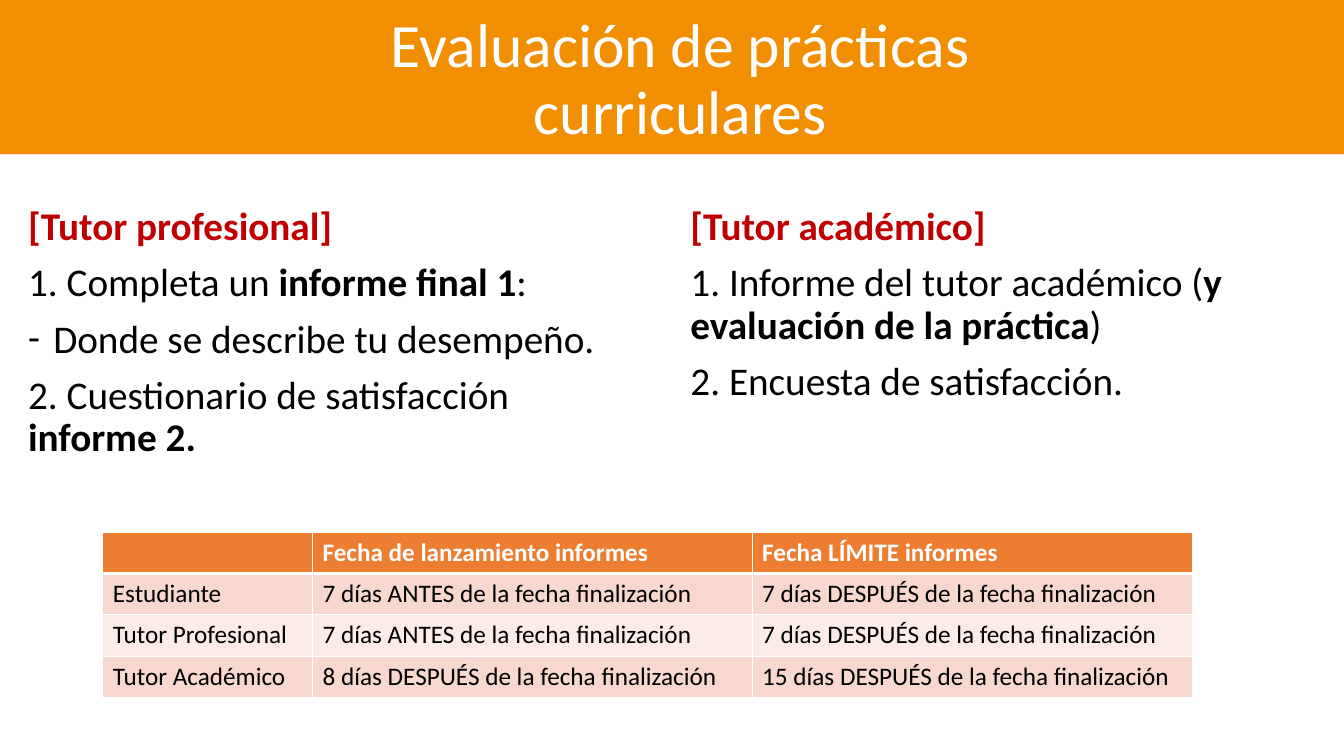
from lxml.etree import SubElement
from pptx import Presentation
from pptx.dml.color import RGBColor
from pptx.enum.shapes import MSO_SHAPE
from pptx.enum.text import MSO_ANCHOR, PP_ALIGN
from pptx.oxml import parse_xml
from pptx.oxml.ns import nsdecls, qn
from pptx.util import Inches, Pt

FONT = "Calibri"
ORANGE = RGBColor(0xF1, 0x8E, 0x01)
RED = RGBColor(0xC0, 0x00, 0x00)
BLACK = RGBColor(0x00, 0x00, 0x00)
WHITE = RGBColor(0xFF, 0xFF, 0xFF)
HEADER_FILL = RGBColor(0xED, 0x7D, 0x31)
BAND_FILLS = [RGBColor(0xFC, 0xEC, 0xE8), RGBColor(0xF8, 0xD7, 0xCE)]

TITLE = "Evaluación de prácticas curriculares"
TUTORS = [
    {
        "left": 0.18, "width": 6.15, "heading": "[Tutor profesional]",
        "lines": [
            (False, [("1. Completa un ", False), ("informe final 1", True), (":", False)]),
            (True, [("Donde se describe tu desempeño.", False)]),
            (False, [("2. Cuestionario de satisfacción ", False), ("informe 2.", True)]),
        ],
    },
    {
        "left": 6.75, "width": 5.67, "heading": "[Tutor académico]",
        "lines": [
            (False, [("1. Informe del tutor académico (", False),
                     ("y evaluación de la práctica", True), (")", False)]),
            (False, [("2. Encuesta de satisfacción.", False)]),
        ],
    },
]
DEADLINES = [
    ("", "Fecha de lanzamiento informes", "Fecha LÍMITE informes"),
    ("Estudiante", "7 días ANTES de la fecha finalización",
     "7 días DESPUÉS de la fecha finalización"),
    ("Tutor Profesional", "7 días ANTES de la fecha finalización",
     "7 días DESPUÉS de la fecha finalización"),
    ("Tutor Académico", "8 días DESPUÉS de la fecha finalización",
     "15 días DESPUÉS de la fecha finalización"),
]
COLUMN_WIDTHS = [2.08, 4.36, 4.37]
ROW_HEIGHT = 0.41


def style(font, size, color, bold=False):
    font.name = FONT
    font.size = Pt(size)
    font.color.rgb = color
    font.bold = bold


def add_box(page, left, top, width, height):
    box = page.shapes.add_textbox(Inches(left), Inches(top), Inches(width), Inches(height))
    box.text_frame.word_wrap = True
    return box.text_frame


def add_title(page, width):
    band = page.shapes.add_shape(MSO_SHAPE.RECTANGLE, 0, 0, width, Inches(1.53))
    band.shadow.inherit = False
    band.fill.solid()
    band.fill.fore_color.rgb = ORANGE
    band.line.fill.background()
    frame = add_box(page, 3.04, 0.08, 7.42, 1.45)
    frame.vertical_anchor = MSO_ANCHOR.MIDDLE
    frame.text = TITLE
    para = frame.paragraphs[0]
    para.alignment = PP_ALIGN.CENTER
    para.line_spacing = 0.9
    style(para.runs[0].font, 44, WHITE)


def add_dash(para):
    properties = para._p.get_or_add_pPr()
    properties.set("marL", str(Inches(0.25)))
    properties.set("indent", str(Inches(-0.25)))
    SubElement(properties, qn("a:buFont")).set("typeface", FONT)
    SubElement(properties, qn("a:buChar")).set("char", "-")


def add_tutor(page, tutor):
    frame = add_box(page, tutor["left"], 2, tutor["width"], 4.76)
    frame.text = tutor["heading"]
    heading = frame.paragraphs[0]
    heading.line_spacing = 0.9
    style(heading.runs[0].font, 28, RED, True)
    for dashed, spans in tutor["lines"]:
        para = frame.add_paragraph()
        if dashed:
            add_dash(para)
        para.line_spacing = 0.9
        para.space_before = Pt(10)
        for words, bold in spans:
            span = para.add_run()
            span.text = words
            style(span.font, 28, BLACK, bold)


def add_borders(cell, top, bottom):
    properties = cell._tc.get_or_add_tcPr()
    sides = [("lnL", 1), ("lnR", 1), ("lnT", top), ("lnB", bottom)]
    for position, (side, points) in enumerate(sides):
        properties.insert(position, parse_xml(
            f'<a:{side} {nsdecls("a")} w="{Pt(points)}"><a:solidFill>'
            f'<a:srgbClr val="{WHITE}"/></a:solidFill></a:{side}>'))


def add_deadlines(page):
    table = page.shapes.add_table(
        len(DEADLINES), len(COLUMN_WIDTHS), Inches(1.02), Inches(5.28),
        Inches(sum(COLUMN_WIDTHS)), Inches(ROW_HEIGHT * len(DEADLINES))).table
    for column, width in zip(table.columns, COLUMN_WIDTHS):
        column.width = Inches(width)
    for row_index, row in enumerate(DEADLINES):
        header = row_index == 0
        table.rows[row_index].height = Inches(ROW_HEIGHT)
        for column_index, words in enumerate(row):
            cell = table.cell(row_index, column_index)
            cell.text = words
            style(cell.text_frame.paragraphs[0].font, 18, WHITE if header else BLACK, header)
            cell.fill.solid()
            cell.fill.fore_color.rgb = HEADER_FILL if header else BAND_FILLS[row_index % 2]
            add_borders(cell, 3 if row_index == 1 else 1, 3 if header else 1)


def main():
    deck = Presentation()
    deck.slide_width = Inches(13.33)
    deck.slide_height = Inches(7.5)
    page = deck.slides.add_slide(deck.slide_layouts[6])
    add_title(page, deck.slide_width)
    for tutor in TUTORS:
        add_tutor(page, tutor)
    add_deadlines(page)
    deck.save("out.pptx")


if __name__ == "__main__":
    main()
